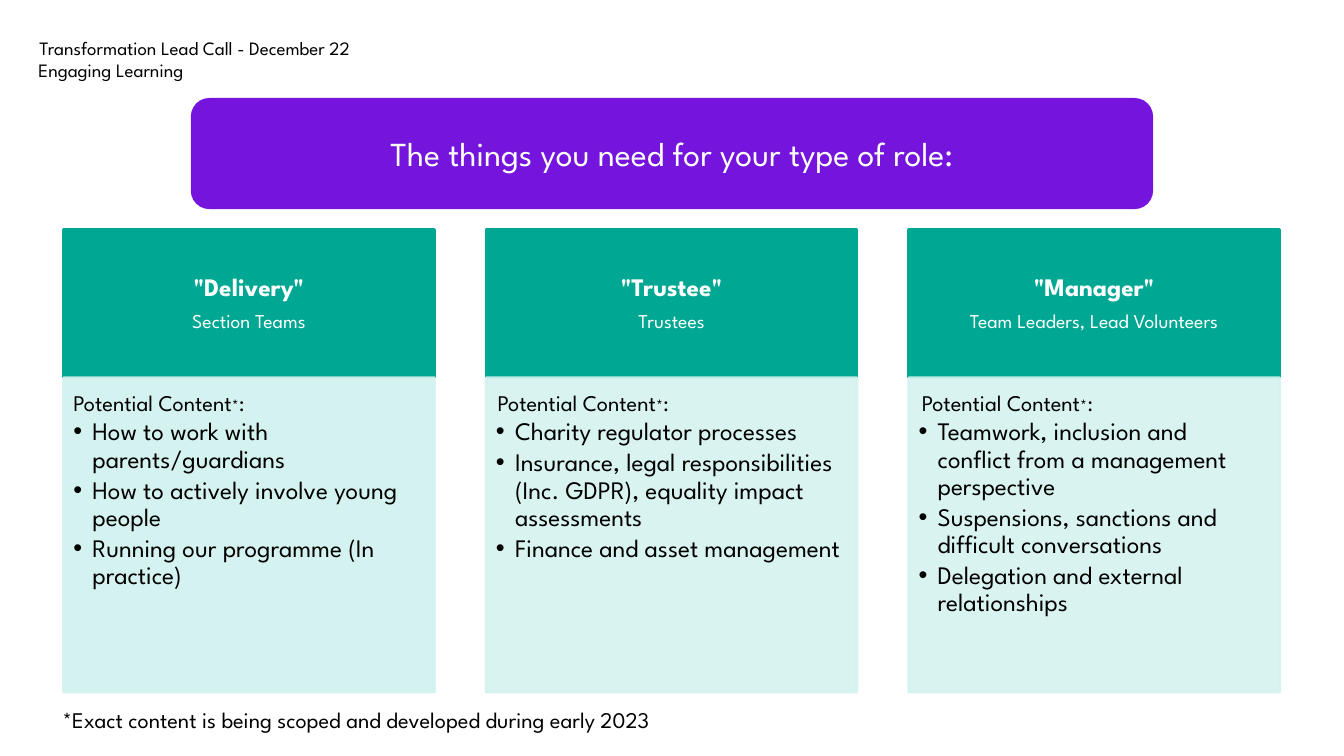
from lxml.etree import SubElement
from pptx import Presentation
from pptx.dml.color import RGBColor
from pptx.enum.shapes import MSO_SHAPE
from pptx.enum.text import MSO_ANCHOR, MSO_AUTO_SIZE, PP_ALIGN
from pptx.oxml.ns import qn
from pptx.util import Cm, Pt

TITLE = "Transformation Lead Call - December 22"
TOPIC = "Engaging Learning"
BANNER = "The things you need for your type of role:"
LABEL = [("Potential Content", 16), ("*", 12), (":", 16)]
NOTE = "*Exact content is being scoped and developed during early 2023"
ROLES = [
    ('"Delivery"', "Section Teams", [
        "How to work with parents/guardians",
        "How to actively involve young people",
        "Running our programme (In practice)"]),
    ('"Trustee"', "Trustees", [
        "Charity regulator processes",
        "Insurance, legal responsibilities (Inc. GDPR), equality impact assessments",
        "Finance and asset management"]),
    ('"Manager"', "Team Leaders, Lead Volunteers", [
        "Teamwork, inclusion and conflict from a management perspective",
        "Suspensions, sanctions and difficult conversations",
        "Delegation and external relationships"]),
]

FONT = "League Spartan"
BLACK = RGBColor(0, 0, 0)
WHITE = RGBColor(255, 255, 255)
PURPLE = RGBColor(0x74, 0x14, 0xDC)
TEAL = RGBColor(0x00, 0xA7, 0x93)
MINT = RGBColor(0xD4, 0xF2, 0xEF)

LEFT, STEP, WIDTH = 1.6, 10.65, 9.35
HEAD_TOP, HEAD_H, BODY_H = 5.79, 3.73, 7.92
BODY_TOP = HEAD_TOP + HEAD_H
LABEL_STEP = 10.69


def style(font, size, color=BLACK, bold=False):
    font.name, font.size, font.bold = FONT, Pt(size), bold
    font.color.rgb = color


def inset(frame, left, top, right, bottom):
    frame.margin_left, frame.margin_top = Cm(left), Cm(top)
    frame.margin_right, frame.margin_bottom = Cm(right), Cm(bottom)


def fade(fill):
    """Make a solid fill 90% opaque."""
    color = fill.find(qn("a:solidFill"))[0]
    SubElement(color, qn("a:alpha"), val="90000")


def block(kind, x, y, w, h, color, edge=False):
    shape = slide.shapes.add_shape(kind, Cm(x), Cm(y), Cm(w), Cm(h))
    shape.shadow.inherit = False
    shape.fill.solid()
    shape.fill.fore_color.rgb = color
    if edge:
        shape.line.color.rgb = color
        shape.line.width = Pt(2)
    else:
        shape.line.fill.background()
    return shape


def text_box(x, y, w, h, parts):
    box = slide.shapes.add_textbox(Cm(x), Cm(y), Cm(w), Cm(h))
    box.text_frame.word_wrap = True
    for words, size in parts:
        run = box.text_frame.paragraphs[0].add_run()
        run.text = words
        style(run.font, size)
    return box


def add_head(x, name, who):
    frame = block(MSO_SHAPE.RECTANGLE, x, HEAD_TOP, WIDTH, HEAD_H, TEAL, True).text_frame
    inset(frame, 0.36, 0.2, 0.36, 0.2)
    frame.vertical_anchor = MSO_ANCHOR.MIDDLE
    frame.text = f"{name}\n{who}"
    for para, size, bold in zip(frame.paragraphs, (18, 14), (True, False)):
        para.alignment = PP_ALIGN.CENTER
        para.line_spacing = 0.9
        para.space_after = Pt(size * 0.35)
        style(para.runs[0].font, size, WHITE, bold)


def add_body(x, items, clear):
    body = block(MSO_SHAPE.RECTANGLE, x, BODY_TOP, WIDTH, BODY_H, MINT, True)
    fade(body.line._get_or_add_ln())
    if clear:
        fade(body._element.spPr)
    frame = body.text_frame
    inset(frame, 0.25, 1.04, 0.36, 0.4)
    frame.vertical_anchor = MSO_ANCHOR.TOP
    frame.text = "\n".join(items)
    for para in frame.paragraphs:
        para.alignment = PP_ALIGN.LEFT
        para.line_spacing = 0.9
        para.space_after = Pt(2.7)
        props = para._p.get_or_add_pPr()
        props.set("marL", str(Cm(0.48)))
        props.set("indent", str(-Cm(0.48)))
        SubElement(props, qn("a:buFont"), typeface="Arial")
        SubElement(props, qn("a:buChar"), char="•")
        style(para.runs[0].font, 18)


deck = Presentation()
deck.slide_width, deck.slide_height = Cm(33.87), Cm(19.05)
slide = deck.slides.add_slide(deck.slide_layouts[5])

title = slide.shapes.title
title.left, title.top, title.width, title.height = Cm(0.97), Cm(0.91), Cm(15.98), Cm(0.58)
frame = title.text_frame
frame.text = TITLE
frame.auto_size = MSO_AUTO_SIZE.NONE
frame.vertical_anchor = MSO_ANCHOR.BOTTOM
inset(frame, 0.02, 0, 0, 0)
frame.paragraphs[0].alignment = PP_ALIGN.LEFT
style(frame.paragraphs[0].runs[0].font, 13.5)

topic = text_box(0.97, 1.48, 15.98, 0.58, [(TOPIC, 13.5)])
inset(topic.text_frame, 0, 0, 0, 0)

for col, (name, who, items) in enumerate(ROLES):
    x = LEFT + col * STEP
    add_head(x, name, who)
    add_body(x, items, col > 0)
    text_box(LEFT + col * LABEL_STEP, 9.68, 7.32, 0.94, LABEL)

banner = block(MSO_SHAPE.ROUNDED_RECTANGLE, 4.81, 2.47, 24.25, 2.8, PURPLE)
frame = banner.text_frame
frame.vertical_anchor = MSO_ANCHOR.MIDDLE
frame.text = BANNER
frame.paragraphs[0].alignment = PP_ALIGN.CENTER
style(frame.paragraphs[0].runs[0].font, 24, WHITE)

text_box(1.33, 17.68, 19.35, 0.94, [(NOTE, 16)])

deck.save("out.pptx")
